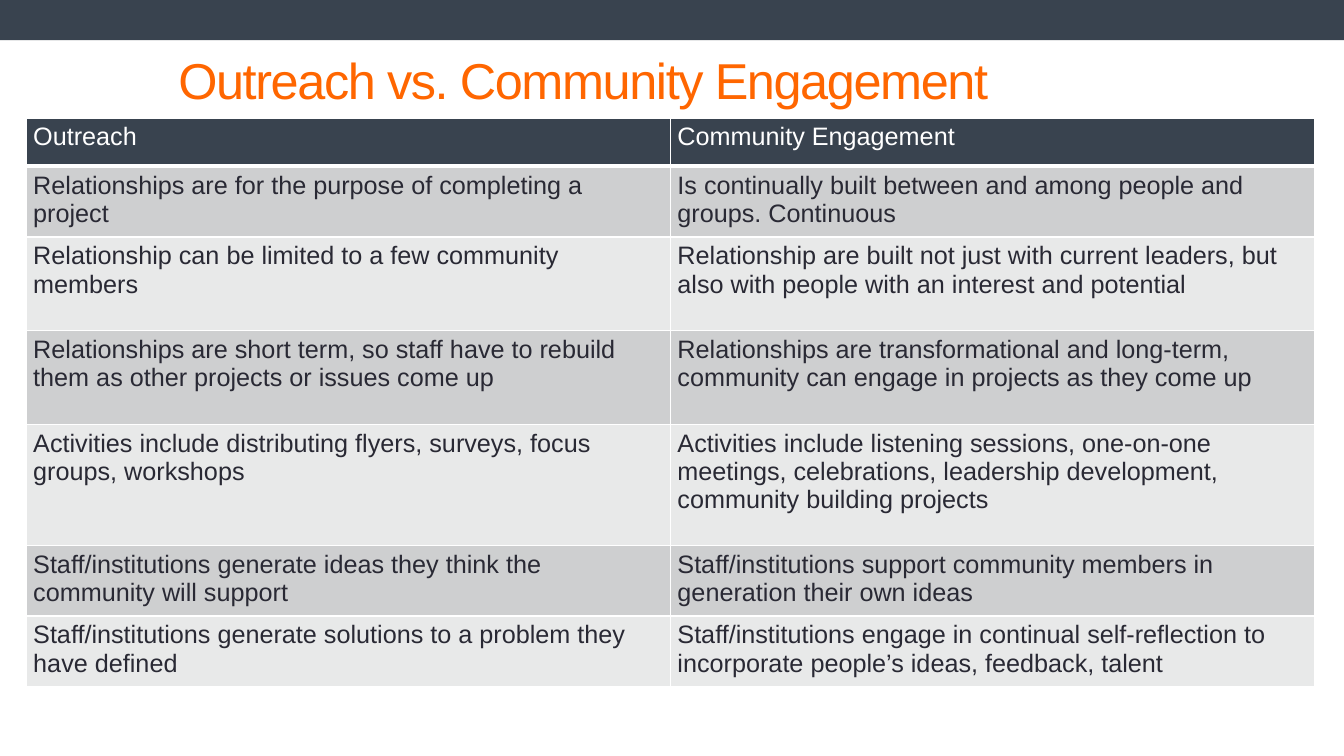
"""Build a slide that compares outreach with community engagement."""
from dataclasses import dataclass

from lxml.etree import SubElement
from pptx import Presentation
from pptx.dml.color import RGBColor
from pptx.enum.shapes import MSO_SHAPE
from pptx.enum.text import MSO_ANCHOR
from pptx.oxml.ns import qn
from pptx.slide import Slide
from pptx.table import Table, _Cell
from pptx.text.text import _Paragraph
from pptx.util import Inches, Pt

SLATE = RGBColor(0x39, 0x43, 0x4F)
ORANGE = RGBColor(0xFF, 0x66, 0x00)
WHITE = RGBColor(0xFF, 0xFF, 0xFF)
INK = RGBColor(0x29, 0x29, 0x34)
BANDS = (RGBColor(0xE8, 0xE9, 0xE9), RGBColor(0xCE, 0xCF, 0xD0))


@dataclass(frozen=True)
class Row:
    height: float
    left: str
    right: str


ROWS = (
    Row(0.48, "Outreach", "Community Engagement"),
    Row(0.65, "Relationships are for the purpose of completing a project",
        "Is continually built between and among people and groups. Continuous"),
    Row(0.93, "Relationship can be limited to a few community members",
        "Relationship are built not just with current leaders, but also with "
        "people with an interest and potential"),
    Row(0.93, "Relationships are short term, so staff have to rebuild them as "
        "other projects or issues come up",
        "Relationships are transformational and long-term, community can "
        "engage in projects as they come up"),
    Row(1.2, "Activities include distributing flyers, surveys, focus groups, workshops",
        "Activities include listening sessions, one-on-one meetings, "
        "celebrations, leadership development, community building projects"),
    Row(0.65, "Staff/institutions generate ideas they think the community will support",
        "Staff/institutions support community members in generation their own ideas"),
    Row(0.65, "Staff/institutions generate solutions to a problem they have defined",
        "Staff/institutions engage in continual self-reflection to incorporate "
        "people’s ideas, feedback, talent"),
)


def style(line: _Paragraph, size: int, color: RGBColor) -> None:
    line.font.name = "Arial"
    line.font.size = Pt(size)
    line.font.color.rgb = color


def add_bar(slide: Slide) -> None:
    bar = slide.shapes.add_shape(
        MSO_SHAPE.RECTANGLE, 0, 0, Inches(13.33), Inches(0.4))
    bar.shadow.inherit = False
    bar.fill.solid()
    bar.fill.fore_color.rgb = SLATE
    bar.line.fill.background()


def add_title(slide: Slide) -> None:
    box = slide.shapes.add_textbox(
        Inches(1.67), Inches(0.25), Inches(9), Inches(1.08))
    frame = box.text_frame
    frame.word_wrap = True
    frame.vertical_anchor = MSO_ANCHOR.MIDDLE
    title = frame.paragraphs[0]
    run = title.add_run()
    run.text = "Outreach vs. Community Engagement"
    style(title, 36, ORANGE)
    run.font._element.set("spc", "-100")


def set_edges(cell: _Cell, base: int) -> None:
    props = cell._tc.get_or_add_tcPr()
    for side, width in (("L", 1), ("R", 1), ("T", 1), ("B", base)):
        edge = SubElement(props, qn(f"a:ln{side}"), w=str(Pt(width)))
        fill = SubElement(edge, qn("a:solidFill"))
        SubElement(fill, qn("a:srgbClr"), val=str(WHITE))


def fill_row(table: Table, index: int, row: Row) -> None:
    head = index == 0
    table.rows[index].height = Inches(row.height)
    for cell, text in zip(table.rows[index].cells, (row.left, row.right)):
        cell.text = text
        style(cell.text_frame.paragraphs[0], 18, WHITE if head else INK)
        cell.margin_left = cell.margin_right = Inches(0.07)
        cell.margin_top = cell.margin_bottom = Inches(0.05)
        set_edges(cell, 3 if head else 1)
        cell.fill.solid()
        cell.fill.fore_color.rgb = SLATE if head else BANDS[index % 2]


def add_grid(slide: Slide) -> None:
    height = sum(row.height for row in ROWS)
    table = slide.shapes.add_table(
        len(ROWS), 2, Inches(0.26), Inches(1.17),
        Inches(12.78), Inches(height)).table
    for index, row in enumerate(ROWS):
        fill_row(table, index, row)


def main() -> None:
    deck = Presentation()
    deck.slide_width = Inches(13.33)
    deck.slide_height = Inches(7.5)
    slide = deck.slides.add_slide(deck.slide_layouts[6])
    add_bar(slide)
    add_title(slide)
    add_grid(slide)
    deck.save("out.pptx")


if __name__ == "__main__":
    main()
